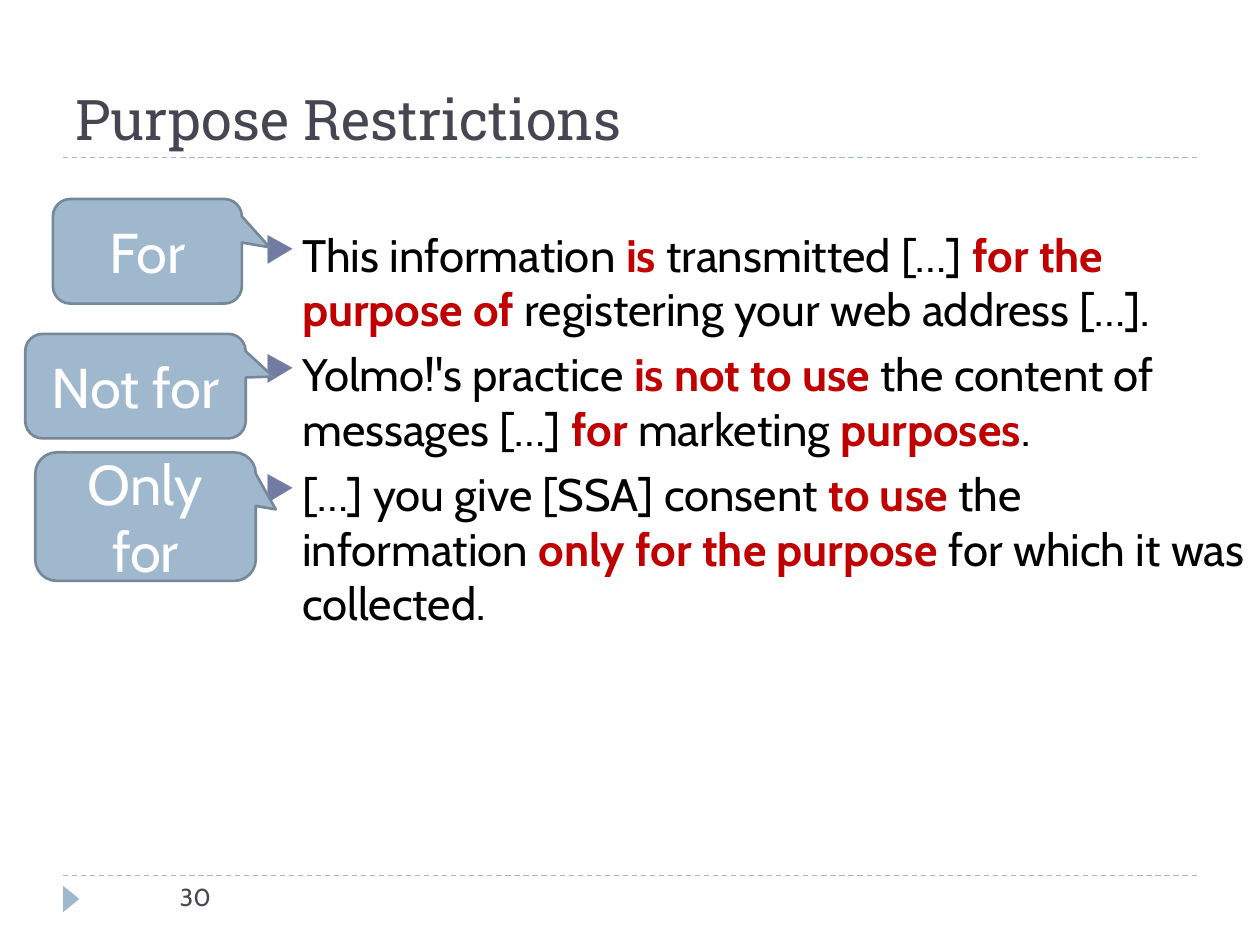
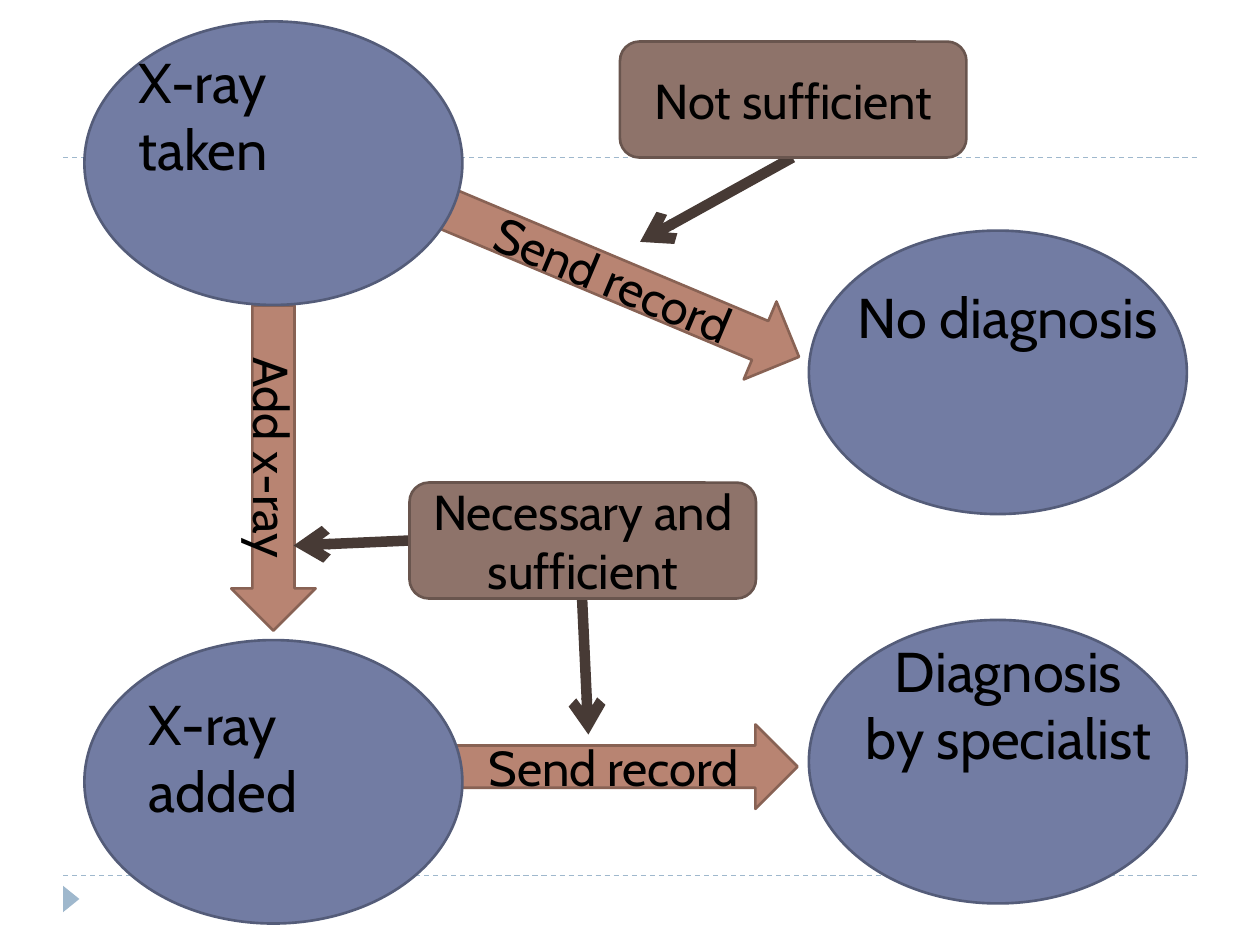
import lxml.etree
import pptx
import pptx.dml.color
import pptx.enum.dml
import pptx.enum.shapes
import pptx.enum.text
import pptx.oxml.ns
import pptx.util

Inches, Pt = pptx.util.Inches, pptx.util.Pt
RGB = pptx.dml.color.RGBColor.from_string
Kind = pptx.enum.shapes.MSO_SHAPE
Align = pptx.enum.text.PP_ALIGN
Anchor = pptx.enum.text.MSO_ANCHOR
qn = pptx.oxml.ns.qn
Sub = lxml.etree.SubElement


class Theme:
    head, body = "Roboto Slab", "Cabin"
    ink, dark, white, red = "000000", "464653", "FFFFFF", "C00000"
    sky, blue, wire = "9FB8CD", "727CA3", "473A35"
    call = (sky, "768898")
    state = (blue, "545C79")
    step = ("B88472", "886254")
    note = ("8E736A", "69554E")
    big, mid, list, small = 32, 28, 26, 14
    edge, thick, thin = 1.5, 6, 0.75


def block(slide, kind, box, text="", paint=None, size=Theme.big,
          color=Theme.ink, font=Theme.body, align=Align.CENTER,
          anchor=Anchor.MIDDLE):
    """Add a preset shape, or a text box if kind is None; paint is (fill, line)."""
    place = [Inches(n) for n in box]
    if kind is None:
        shape = slide.shapes.add_textbox(*place)
    else:
        shape = slide.shapes.add_shape(kind, *place)
        shape.shadow.inherit = False
        fill, line = paint
        shape.fill.solid()
        shape.fill.fore_color.rgb = RGB(fill)
        if line:
            shape.line.color.rgb = RGB(line)
            shape.line.width = Pt(Theme.edge)
        else:
            shape.line.fill.background()
    frame = shape.text_frame
    frame.word_wrap = True
    frame.vertical_anchor = anchor
    frame.text = text
    for para in frame.paragraphs:
        para.alignment = align
        for run in para.runs:
            run.font.size = Pt(size)
            run.font.name = font
            run.font.color.rgb = RGB(color)
    return shape


def rule(slide, start, end, color, width):
    """Add a straight line without a shadow."""
    line = slide.shapes.add_connector(
        pptx.enum.shapes.MSO_CONNECTOR.STRAIGHT,
        *[Inches(n) for n in start + end])
    line.line.color.rgb = RGB(color)
    line.line.width = Pt(width)
    Sub(line._element.spPr, qn("a:effectLst"))
    return line


deck = pptx.Presentation()
deck.slide_width, deck.slide_height = Inches(10), Inches(7.5)

# Both slides: two dashed rules and the footer marker
slides = [deck.slides.add_slide(deck.slide_layouts[6]) for _ in range(2)]
for slide in slides:
    for y in (6.95, 1.25):
        dash = rule(slide, (0.5, y), (9.5, y), Theme.sky, Theme.thin)
        dash.line.dash_style = pptx.enum.dml.MSO_LINE.DASH
    mark = block(slide, Kind.ISOSCELES_TRIANGLE, (0.46, 7.07, 0.21, 0.13),
                 paint=(Theme.sky, None))
    mark.rotation = 90
rules, flow = slides

# Purpose restrictions
block(rules, None, (1.33, 6.95, 1.33, 0.4), "30", size=Theme.small,
      color=Theme.dark, align=Align.LEFT, anchor=Anchor.TOP)
block(rules, None, (0.5, 0.17, 9, 1.08), "Purpose Restrictions",
      color=Theme.dark, font=Theme.head, align=Align.LEFT, anchor=Anchor.BOTTOM)

# Stars enclose the key words
quotes = [
    "This information *is* transmitted […] *for the purpose of *"
    "registering your web address […].",
    "Yolmo!'s practice *is not to use *the content of messages […] "
    "*for* marketing *purposes*.",
    "[…] you give [SSA] consent *to use* the information "
    "*only for the purpose *for which it was collected.",
]
body = block(rules, None, (2, 1.75, 8, 5.42), anchor=Anchor.TOP).text_frame
for i, quote in enumerate(quotes):
    para = body.add_paragraph() if i else body.paragraphs[0]
    para.alignment = Align.LEFT
    para.space_before = Pt(6)
    props = para._p.get_or_add_pPr()
    props.set("marL", str(Inches(0.3)))
    props.set("indent", str(-Inches(0.3)))
    Sub(Sub(props, qn("a:buClr")), qn("a:srgbClr"), val=Theme.blue)
    Sub(props, qn("a:buSzPct"), val="76000")
    Sub(props, qn("a:buChar"), char="▶")
    for j, part in enumerate(quote.split("*")):
        key = j % 2 == 1
        run = para.add_run()
        run.text = part
        run.font.size = Pt(Theme.list)
        run.font.name = Theme.body
        run.font.bold = key
        run.font.color.rgb = RGB(Theme.red if key else Theme.ink)

for text, box, tip in [
    ("For", (0.42, 1.58, 1.5, 0.83), (0.647, -0.038)),
    ("Not for", (0.2, 2.65, 1.75, 0.83), (0.625, -0.091)),
    ("Only for", (0.28, 3.59, 1.75, 1.02), (0.591, -0.056)),
]:
    call = block(rules, Kind.ROUNDED_RECTANGULAR_CALLOUT, box, text,
                 Theme.call, color=Theme.white)
    call.adjustments[0], call.adjustments[1] = tip

# Diagnosis flow: steps lie below the states they join
for text, box, turn in [
    ("Add x-ray", (0.88, 3.38, 2.58, 0.67), 90),
    ("Send record", (3.58, 5.75, 2.75, 0.67), 0),
    ("Send record", (3.43, 1.91, 3.03, 0.67), 22.8),
]:
    step = block(flow, Kind.RIGHT_ARROW, box, text, Theme.step, Theme.mid)
    step.rotation = turn

for spot, text, box, align in [
    ((0.67, 0.17), "X-ray taken", (1, 0.33, 2.24, 0.64), Align.LEFT),
    ((0.67, 5.08), "X-ray added", (1.08, 5.42, 2.38, 0.64), Align.LEFT),
    ((6.42, 4.92), "Diagnosis\nby specialist", (6.75, 5, 2.51, 1.18), Align.CENTER),
    ((6.42, 1.83), "No diagnosis", (6.69, 2.19, 2.62, 0.64), Align.CENTER),
]:
    block(flow, Kind.OVAL, spot + (3, 2.25), paint=Theme.state)
    block(flow, None, box, text, align=align, anchor=Anchor.TOP)

for start, end in [
    ((6.29, 1.25), (5.08, 1.92)),
    ((4.62, 4.75), (4.67, 5.83)),
    ((3.25, 4.29), (2.33, 4.33)),
]:
    wire = rule(flow, start, end, Theme.wire, Theme.thick)
    Sub(wire.line._get_or_add_ln(), qn("a:tailEnd"), type="arrow")

for text, spot in [
    ("Not sufficient", (4.92, 0.33)),
    ("Necessary and sufficient", (3.25, 3.83)),
]:
    block(flow, Kind.ROUNDED_RECTANGLE, spot + (2.75, 0.92), text,
          Theme.note, Theme.mid)

deck.save("out.pptx")
